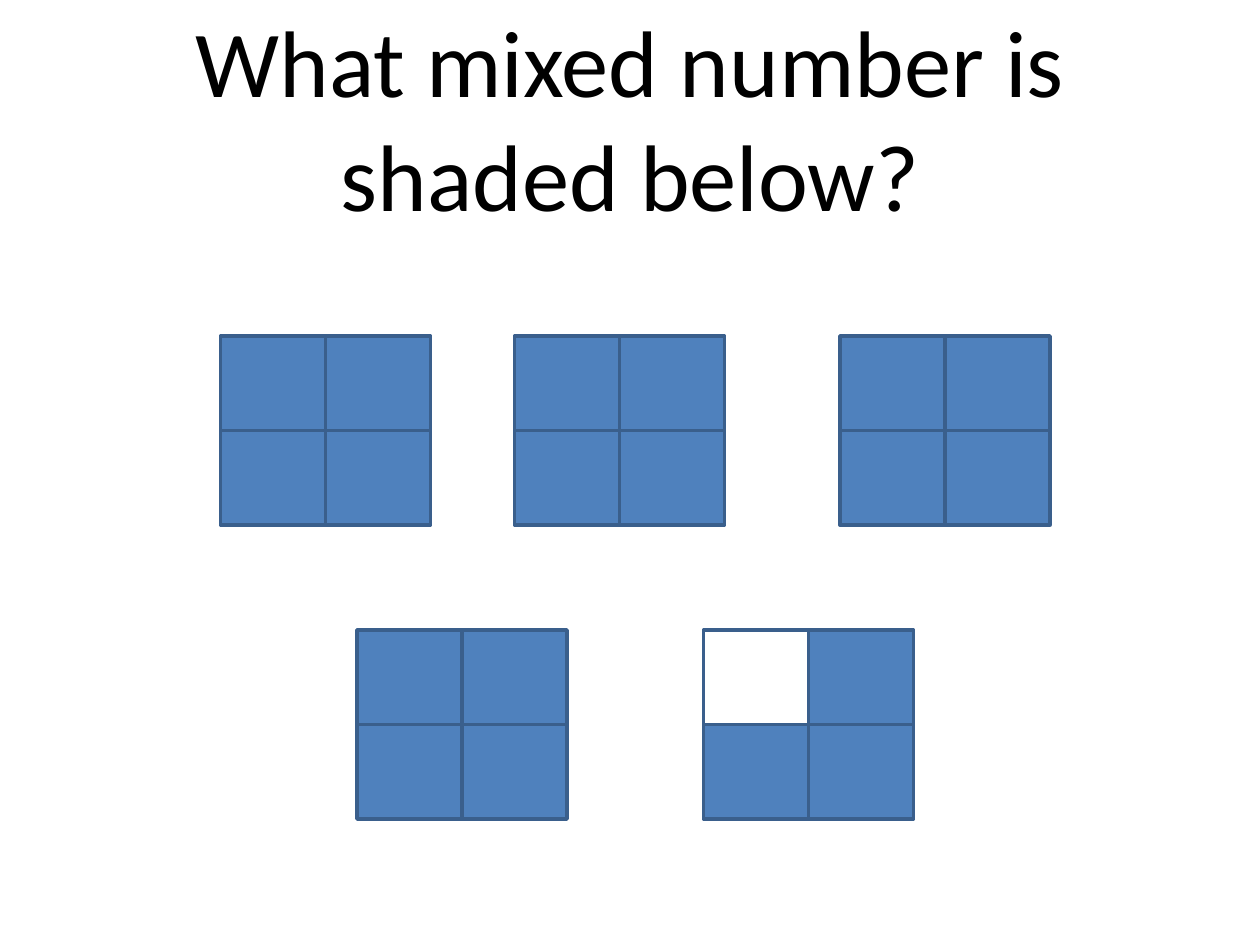
from dataclasses import dataclass

from pptx import Presentation
from pptx.dml.color import RGBColor
from pptx.enum.shapes import MSO_SHAPE
from pptx.enum.text import MSO_ANCHOR, PP_ALIGN
from pptx.util import Pt

PX = 7620  # EMU per px, 120 px to the inch


@dataclass(frozen=True)
class Theme:
    font: str = "Calibri"
    title_size: int = 54
    line_width: int = 2
    text: RGBColor = RGBColor(0x00, 0x00, 0x00)
    shaded: RGBColor = RGBColor(0x4F, 0x81, 0xBD)
    unshaded: RGBColor = RGBColor(0xFF, 0xFF, 0xFF)
    outline: RGBColor = RGBColor(0x3A, 0x5F, 0x8C)


theme = Theme()


def write_text(box, text, *, size, color, align, anchor):
    frame = box.text_frame
    frame.word_wrap = True
    frame.vertical_anchor = anchor
    paragraph = frame.paragraphs[0]
    paragraph.alignment = align
    span = paragraph.add_run()
    span.text = text
    span.font.name = theme.font
    span.font.size = Pt(size)
    span.font.color.rgb = color


deck = Presentation()
deck.slide_width, deck.slide_height = 1200 * PX, 900 * PX
page = deck.slides.add_slide(deck.slide_layouts[5])

# Title
title = page.shapes.title
title.left, title.top = 60 * PX, 36 * PX
title.width, title.height = 1080 * PX, 150 * PX
write_text(title, "What mixed number is shaded below?", size=theme.title_size,
           color=theme.text, align=PP_ALIGN.CENTER, anchor=MSO_ANCHOR.MIDDLE)

# Wholes split into quarters: left, top, number of unshaded quarters
CELL_WIDTH, CELL_HEIGHT = 100, 90
wholes = [
    (210, 320, 0), (490, 320, 0), (800, 320, 0),
    (340, 600, 0), (670, 600, 1),
]
for left, top, unshaded_count in wholes:
    for index in range(4):
        row, column = divmod(index, 2)
        quarter = page.shapes.add_shape(
            MSO_SHAPE.RECTANGLE,
            (left + column * CELL_WIDTH) * PX, (top + row * CELL_HEIGHT) * PX,
            CELL_WIDTH * PX, CELL_HEIGHT * PX)
        quarter.shadow.inherit = False
        quarter.fill.solid()
        quarter.fill.fore_color.rgb = (
            theme.unshaded if index < unshaded_count else theme.shaded)
        quarter.line.color.rgb = theme.outline
        quarter.line.width = Pt(theme.line_width)

deck.save("out.pptx")
